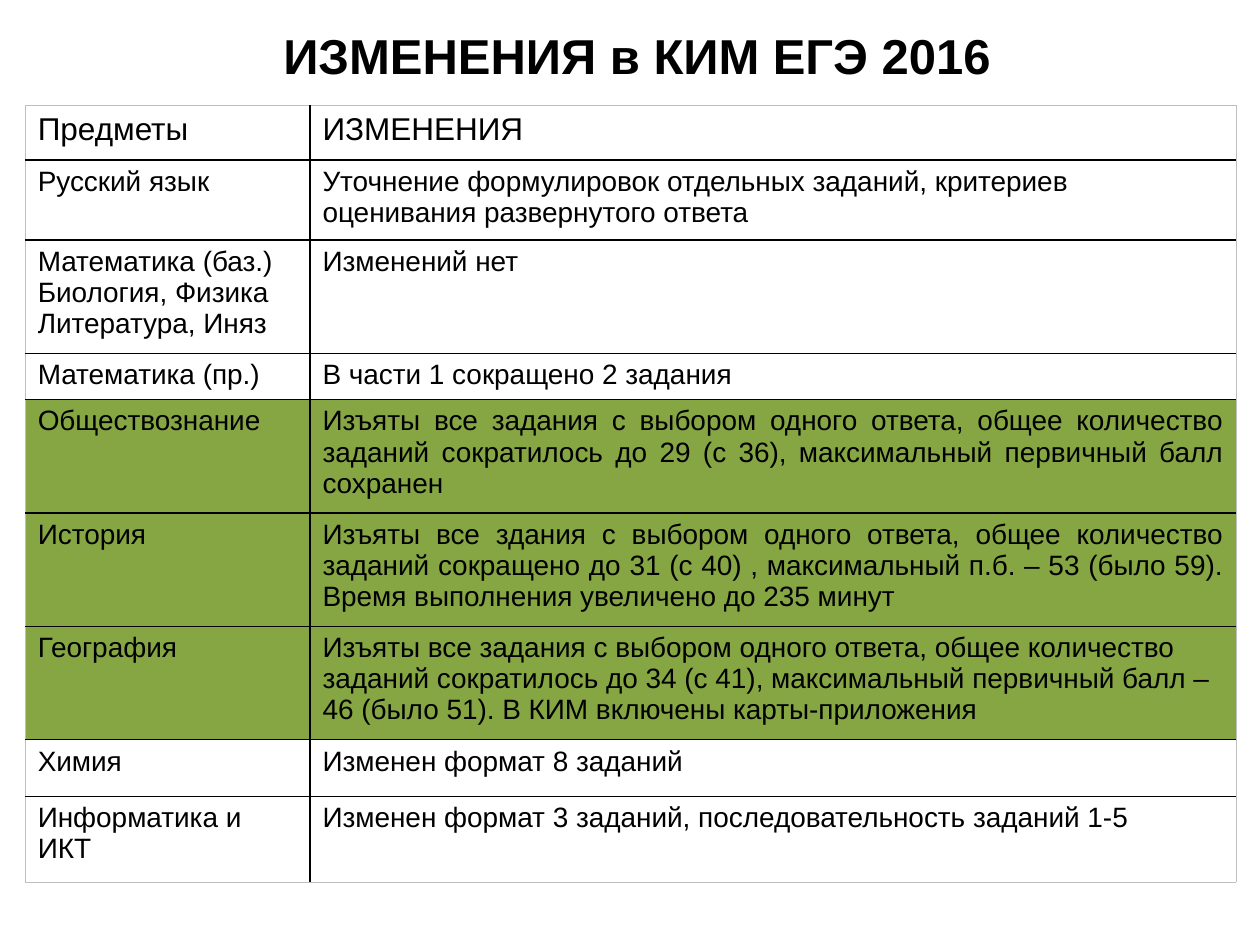
from lxml import etree
from pptx import Presentation
from pptx import util as u
from pptx.dml.color import RGBColor
from pptx.enum import text
from pptx.oxml.ns import qn

COLORS = {"ink": "000000", "paper": "FFFFFF", "green": "86A644", "frame": "BFBFBF"}
FONT = "Arial"
LEFT, JUSTIFY = text.PP_ALIGN.LEFT, text.PP_ALIGN.JUSTIFY
COL_WIDTHS = [2.26, 7.35]

# subject, change, row height, fill, alignment of the change
ROWS = [
    ("Предметы", "ИЗМЕНЕНИЯ", 0.43, "paper", LEFT),
    ("Русский язык", "Уточнение формулировок отдельных заданий, критериев "
     "оценивания развернутого ответа", 0.61, "paper", LEFT),
    ("Математика (баз.)\nБиология, Физика\nЛитература, Иняз", "Изменений нет",
     0.87, "paper", LEFT),
    ("Математика (пр.)", "В части 1 сокращено 2 задания", 0.35, "paper", LEFT),
    ("Обществознание", "Изъяты все задания с выбором одного ответа, общее количество "
     "заданий сократилось до 29 (с 36), максимальный первичный балл сохранен",
     0.85, "green", JUSTIFY),
    ("История", "Изъяты все здания с выбором одного ответа, общее количество "
     "заданий сокращено до 31 (с 40) , максимальный п.б. – 53 (было 59). "
     "Время выполнения увеличено до 235 минут", 0.87, "green", JUSTIFY),
    ("География", "Изъяты все задания с выбором одного ответа, общее количество "
     "заданий сократилось до 34 (с 41), максимальный первичный балл – "
     "46 (было 51). В КИМ включены карты-приложения", 0.87, "green", LEFT),
    ("Химия", "Изменен формат 8 заданий", 0.45, "paper", LEFT),
    ("Информатика и ИКТ", "Изменен формат 3 заданий, последовательность заданий 1-5",
     0.68, "paper", LEFT),
]


def write(tf, content, size, align, bold=False):
    tf.text = content
    for p in tf.paragraphs:
        p.alignment = align
        for r in p.runs:
            r.font.name, r.font.size, r.font.bold = FONT, u.Pt(size), bold
            r.font.color.rgb = RGBColor.from_string(COLORS["ink"])


def add_title(s, left, top, width, height):
    tf = s.shapes.add_textbox(*map(u.Inches, (left, top, width, height))).text_frame
    tf.word_wrap = True
    tf.vertical_anchor = text.MSO_ANCHOR.MIDDLE
    write(tf, "ИЗМЕНЕНИЯ в КИМ ЕГЭ 2016", 28, text.PP_ALIGN.CENTER, bold=True)


def set_borders(cell, outer):
    """Draw all four sides; outer maps a side to whether it is on the table's edge."""
    tcPr = cell._tc.get_or_add_tcPr()
    for side, on_edge in outer.items():
        width = u.Pt(0.5 if on_edge else 1)
        ln = etree.SubElement(tcPr, qn(f"a:ln{side}"), w=str(width))
        fill = etree.SubElement(ln, qn("a:solidFill"))
        etree.SubElement(fill, qn("a:srgbClr"), val=COLORS["frame" if on_edge else "ink"])


def add_changes_table(s, left, top):
    heights = [row[2] for row in ROWS]
    box = map(u.Inches, (left, top, sum(COL_WIDTHS), sum(heights)))
    table = s.shapes.add_table(len(ROWS), len(COL_WIDTHS), *box).table
    table.first_row = table.horz_banding = False
    for col, width in zip(table.columns, COL_WIDTHS):
        col.width = u.Inches(width)
    last_row, last_col = len(ROWS) - 1, len(COL_WIDTHS) - 1
    for i, (subject, change, height, fill, align) in enumerate(ROWS):
        table.rows[i].height = u.Inches(height)
        for j, (content, al) in enumerate([(subject, LEFT), (change, align)]):
            cell = table.cell(i, j)
            set_borders(cell, {"L": j == 0, "R": j == last_col,
                               "T": i == 0, "B": i == last_row})
            cell.fill.solid()
            cell.fill.fore_color.rgb = RGBColor.from_string(COLORS[fill])
            write(cell.text_frame, content, 18 if i == 0 else 16, al)


def main():
    prs = Presentation()
    prs.slide_width, prs.slide_height = u.Inches(10), u.Inches(7.5)
    s = prs.slides.add_slide(prs.slide_layouts[6])
    add_title(s, 0.75, 0, 8.61, 0.87)
    add_changes_table(s, 0.2, 0.84)
    prs.save("out.pptx")


if __name__ == "__main__":
    main()
